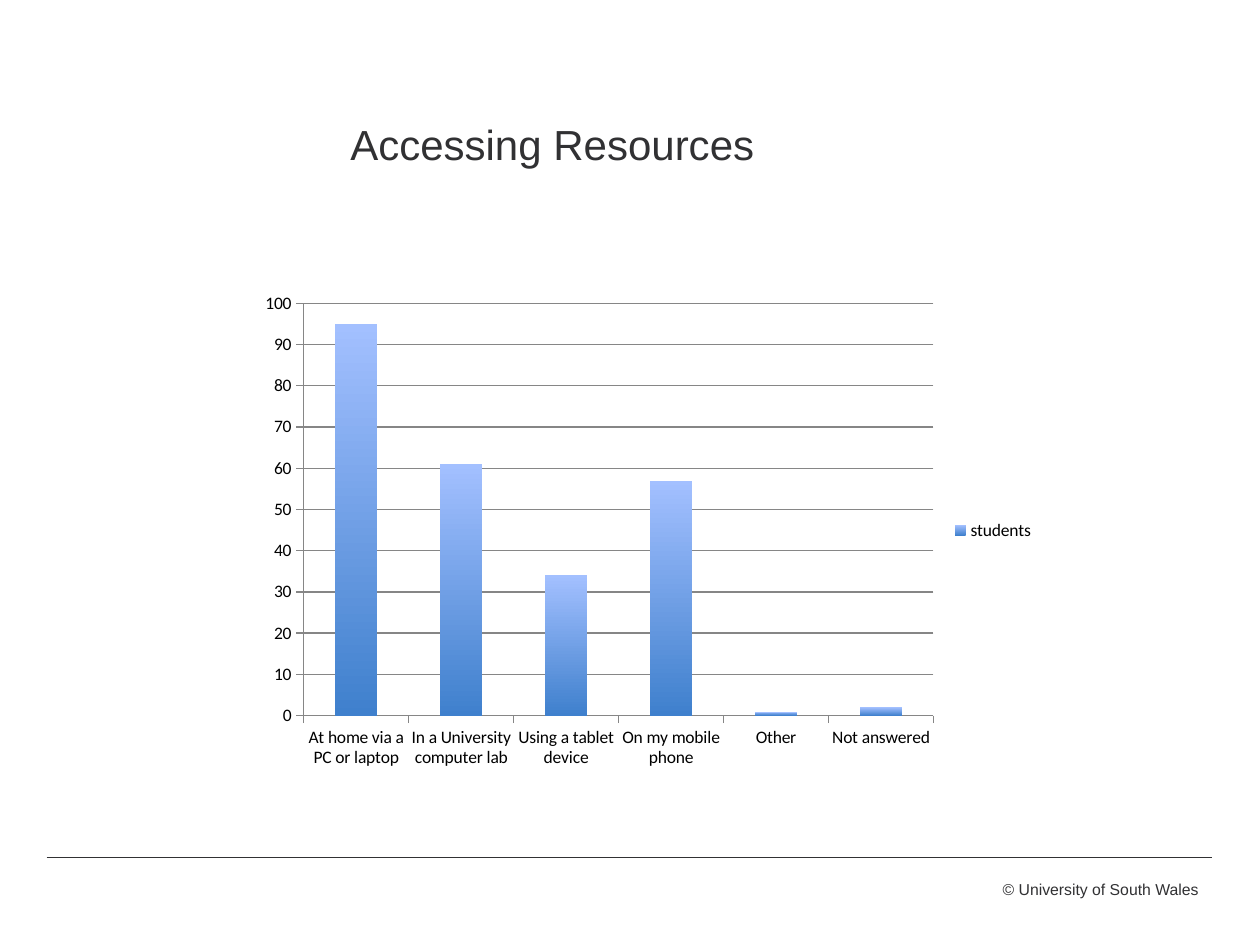
from lxml import etree
from pptx import Presentation
from pptx.chart.data import CategoryChartData
from pptx.dml.color import RGBColor
from pptx.enum import chart as charts, shapes, text
from pptx.oxml.ns import qn
from pptx.util import Inches, Pt

INK = "313133"
GRID = "868686"
STUDENTS_BY_ACCESS = {
    "At home via a PC or laptop": 95,
    "In a University computer lab": 61,
    "Using a tablet device": 34,
    "On my mobile phone": 57,
    "Other": 1,
    "Not answered": 2,
}


def rgb(value):
    return RGBColor.from_string(value)


def style_font(font, name, size, color):
    font.name = name
    font.size = Pt(size)
    font.color.rgb = rgb(color)


def style_line(line, color, width):
    line.color.rgb = rgb(color)
    line.width = Pt(width)


def write(box, wording, size, align):
    frame = box.text_frame
    frame.text = wording
    frame.vertical_anchor = text.MSO_ANCHOR.TOP
    paragraph = frame.paragraphs[0]
    paragraph.alignment = align
    style_font(paragraph.font, "Arial", size, INK)
    return frame


def add_title(slide, wording):
    title = slide.shapes.title
    title.left, title.top = Inches(2.68), Inches(0.89)
    title.width, title.height = Inches(4.73), Inches(1.72)
    write(title, wording, 24, text.PP_ALIGN.LEFT)


def add_footer(slide, wording):
    rule = slide.shapes.add_connector(
        shapes.MSO_CONNECTOR.STRAIGHT,
        Inches(0.37), Inches(6.8), Inches(9.62), Inches(6.8))
    style_line(rule.line, INK, 0.25)
    etree.SubElement(rule._element.spPr, qn("a:effectLst"))
    copyright_box = slide.shapes.add_textbox(
        Inches(7.84), Inches(6.93), Inches(1.77), Inches(0.25))
    frame = write(copyright_box, wording, 9, text.PP_ALIGN.RIGHT)
    frame.word_wrap = False
    frame.auto_size = text.MSO_AUTO_SIZE.SHAPE_TO_FIT_TEXT


def style_axis(axis):
    axis.major_tick_mark = charts.XL_TICK_MARK.OUTSIDE
    axis.minor_tick_mark = charts.XL_TICK_MARK.NONE
    style_line(axis.format.line, GRID, 0.75)


def fill_bars(series, bottom, top):
    fill = series.format.fill
    fill.gradient()
    fill.gradient_angle = 90
    for stop, color in zip(fill.gradient_stops, (bottom, top)):
        stop.color.rgb = rgb(color)


def add_access_chart(slide):
    data = CategoryChartData()
    data.categories = list(STUDENTS_BY_ACCESS)
    data.add_series("students", list(STUDENTS_BY_ACCESS.values()))
    chart = slide.shapes.add_chart(
        charts.XL_CHART_TYPE.COLUMN_CLUSTERED,
        Inches(1.98), Inches(2.25), Inches(6.33), Inches(3.92), data).chart
    style_font(chart.font, "Calibri", 10, "000000")
    chart.has_title = False
    chart.has_legend = True
    chart.legend.position = charts.XL_LEGEND_POSITION.RIGHT
    chart.legend.include_in_layout = False

    percent = chart.value_axis
    percent.minimum_scale, percent.maximum_scale = 0, 100
    percent.major_unit = 10
    percent.has_major_gridlines = True
    style_line(percent.major_gridlines.format.line, GRID, 0.75)
    for axis in (chart.category_axis, percent):
        style_axis(axis)

    plot = chart.plots[0]
    plot.gap_width = 150
    plot.vary_by_categories = False
    fill_bars(plot.series[0], "3F80CD", "A3C0FF")


def main():
    deck = Presentation()
    deck.slide_width, deck.slide_height = Inches(10), Inches(7.5)
    slide = deck.slides.add_slide(deck.slide_layouts[5])
    add_footer(slide, "© University of South Wales")
    add_title(slide, "Accessing Resources")
    add_access_chart(slide)
    deck.save("out.pptx")


if __name__ == "__main__":
    main()
